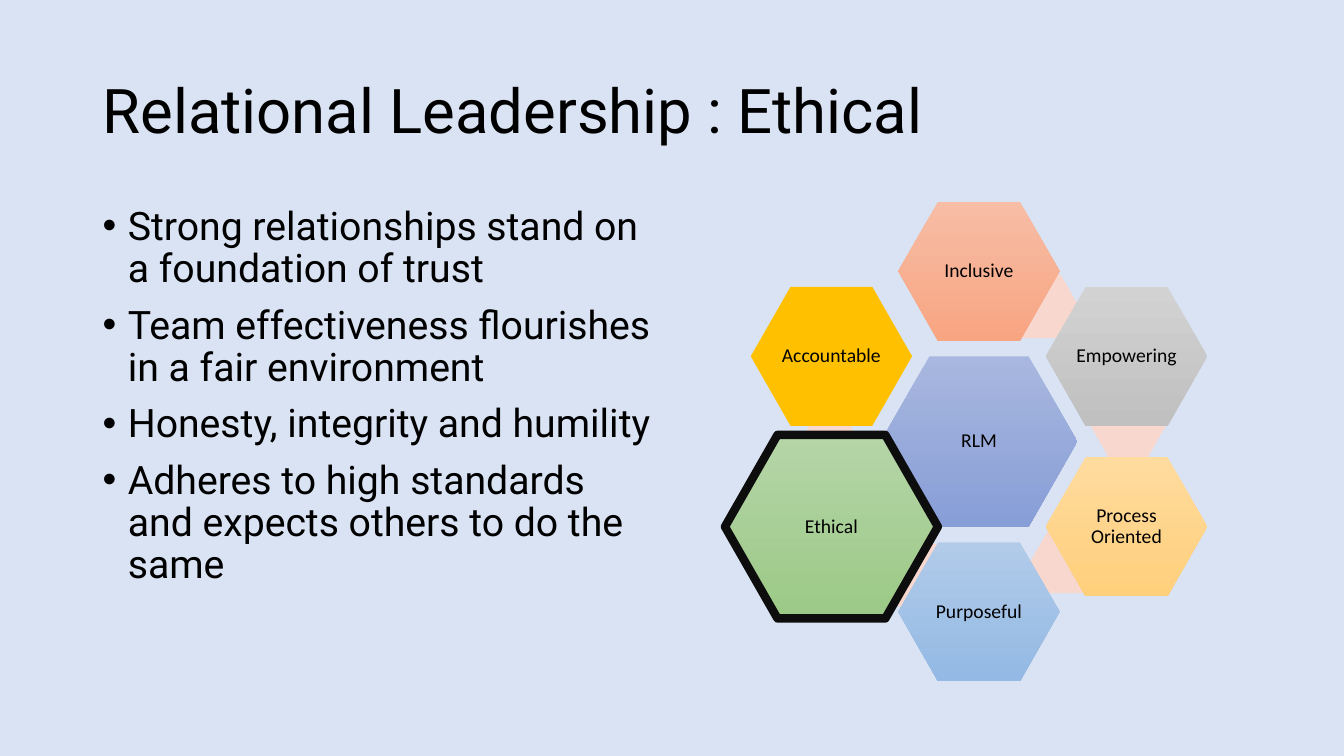
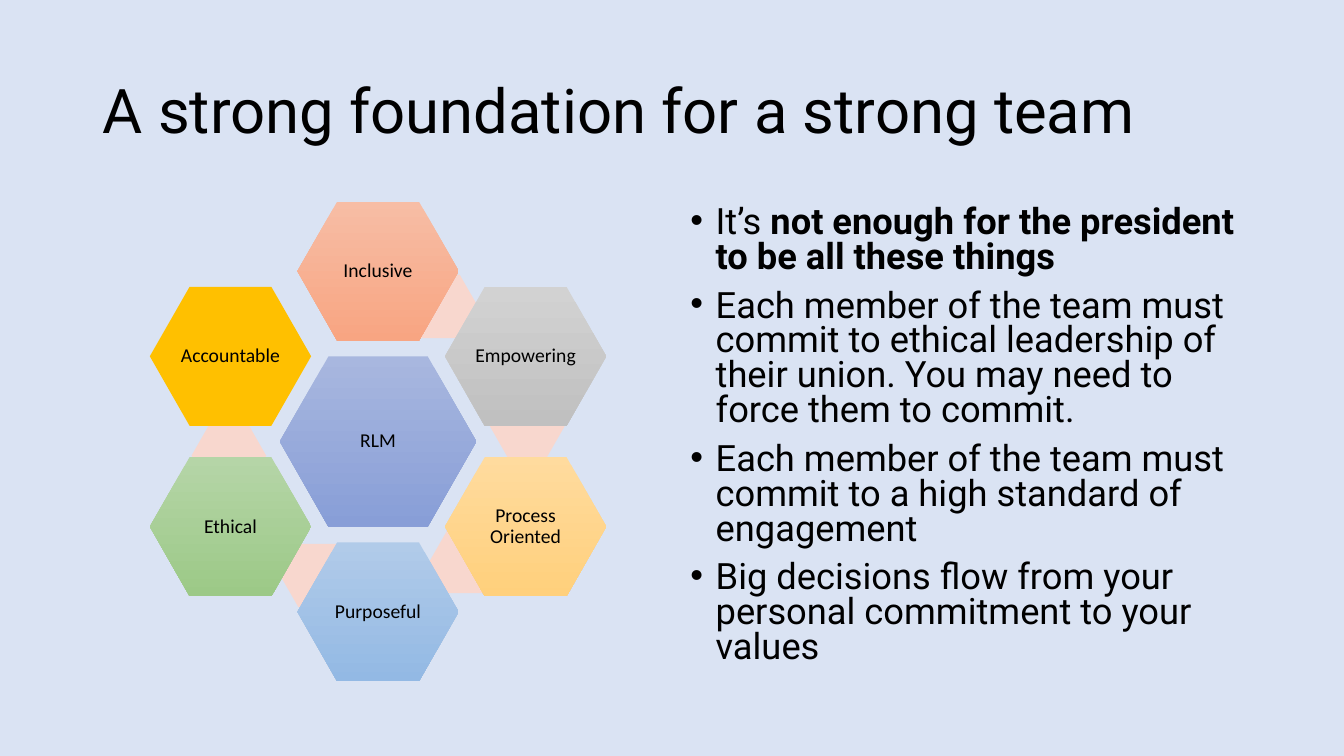
import math

from lxml import etree
from pptx import Presentation
from pptx.dml.color import RGBColor
from pptx.enum import shapes, text
from pptx.oxml import ns
from pptx.util import Inches, Pt

BACKGROUND = RGBColor(0xDA, 0xE3, 0xF3)
BLACK = RGBColor(0, 0, 0)
OUTLINE = RGBColor(0x0D, 0x0D, 0x0D)
LINK = RGBColor(0xF8, 0xD7, 0xCE)
BLUE = RGBColor(0xA8, 0xB7, 0xDF), RGBColor(0x88, 0x9E, 0xD7)
ORANGE = RGBColor(0xF7, 0xBD, 0xA5), RGBColor(0xF8, 0xA5, 0x82)
GREY = RGBColor(0xD2, 0xD2, 0xD2), RGBColor(0xC0, 0xC0, 0xC0)
YELLOW = RGBColor(0xFF, 0xDB, 0x9E), RGBColor(0xFF, 0xD0, 0x7C)
SKY = RGBColor(0xB1, 0xCB, 0xE9), RGBColor(0x93, 0xB9, 0xE4)
GREEN = RGBColor(0xB5, 0xD5, 0xA7), RGBColor(0x9C, 0xC9, 0x87)
GOLD = (RGBColor(0xFF, 0xC0, 0x00),)

BODY_FONT, LABEL_FONT = "Roboto", "Calibri"
CENTER_SIZE, RING_SIZE, LINK_SIZE = (1.95, 1.69), (1.6, 1.38), (0.74, 0.63)
RING_RADIUS = 1.69
EMPHASIS = 1.32

RING = [
    ("Inclusive", ORANGE, (0.62, -1.34)),
    ("Empowering", GREY, (1.48, -0.15)),
    ("Process Oriented", YELLOW, (0.88, 1.19)),
    ("Purposeful", SKY, (-0.6, 1.33)),
    ("Ethical", GREEN, (-1.48, 0.14)),
    ("Accountable", GOLD, None),
]

SLIDES = [
    {
        "title": "Relational Leadership : Ethical",
        "bullets": [
            [("Strong relationships stand on a foundation of trust", False)],
            [("Team effectiveness flourishes in a fair environment", False)],
            [("Honesty, integrity and humility", False)],
            [("Adheres to high standards and expects others to do the same", False)],
        ],
        "left": 0.92, "size": 28, "spacing": 0.9,
        "center": (9.71, 4.38), "emphasized": "Ethical",
    },
    {
        "title": "A strong foundation for a strong team",
        "bullets": [
            [("It’s ", False), ("not enough for the president to be all these things", True)],
            [("Each member of the team must commit to ethical leadership of their union. "
              "You may need to force them to commit.", False)],
            [("Each member of the team must commit to a high standard of engagement", False)],
            [("Big decisions flow from your personal commitment to your values", False)],
        ],
        "left": 6.75, "size": 25.9, "spacing": 0.8,
        "center": (3.75, 4.38), "emphasized": None,
    },
]


def style(font, name, size, bold=False):
    font.name, font.size, font.bold = name, Pt(size), bold
    font.color.rgb = BLACK


def add_text_box(page, left, top, width, height):
    frame = page.shapes.add_textbox(*map(Inches, (left, top, width, height))).text_frame
    frame.word_wrap = True
    return frame


def add_title(page, title):
    frame = add_text_box(page, 0.92, 0.4, 11.5, 1.45)
    frame.vertical_anchor = text.MSO_ANCHOR.MIDDLE
    frame.text = title
    paragraph = frame.paragraphs[0]
    paragraph.line_spacing = 0.9
    style(paragraph.runs[0].font, BODY_FONT, 44)


def add_bullets(page, bullets, left, size, spacing):
    frame = add_text_box(page, left, 2, 5.67, 4.76)
    for index, spans in enumerate(bullets):
        paragraph = frame.add_paragraph() if index else frame.paragraphs[0]
        paragraph.line_spacing = spacing
        paragraph.space_before = Pt(10 if index else 0)
        properties = paragraph._p.get_or_add_pPr()
        properties.set("marL", str(Inches(0.25)))
        properties.set("indent", str(Inches(-0.25)))
        etree.SubElement(properties, ns.qn("a:buFont")).set("typeface", "Arial")
        etree.SubElement(properties, ns.qn("a:buChar")).set("char", "•")
        for words, bold in spans:
            span = paragraph.add_run()
            span.text = words
            style(span.font, BODY_FONT, size, bold)


def add_hexagon(group, center, size, colors, label="", outlined=False):
    corner = [middle - length / 2 for middle, length in zip(center, size)]
    hexagon = group.shapes.add_shape(
        shapes.MSO_SHAPE.HEXAGON, *map(Inches, (*corner, *size)))
    hexagon.adjustments[0] = 0.286
    hexagon.shadow.inherit = False
    if len(colors) == 1:
        hexagon.fill.solid()
        hexagon.fill.fore_color.rgb = colors[0]
    else:
        hexagon.fill.gradient()
        hexagon.fill.gradient_angle = 270
        for stop, color in zip(hexagon.fill.gradient_stops, colors):
            stop.color.rgb = color
    if outlined:
        hexagon.line.color.rgb = OUTLINE
        hexagon.line.width = Pt(6)
    else:
        hexagon.line.fill.background()
    if label:
        frame = hexagon.text_frame
        frame.word_wrap = True
        frame.vertical_anchor = text.MSO_ANCHOR.MIDDLE
        frame.margin_left = frame.margin_right = Inches(0.02)
        frame.margin_top = frame.margin_bottom = Inches(0.02)
        frame.text = label
        paragraph = frame.paragraphs[0]
        paragraph.alignment = text.PP_ALIGN.CENTER
        paragraph.line_spacing = 0.9
        style(paragraph.runs[0].font, LABEL_FONT, 14)


def add_model(page, center, emphasized):
    group = page.shapes.add_group_shape()
    x, y = center
    add_hexagon(group, center, CENTER_SIZE, BLUE, "RLM")
    for index, (label, colors, link) in enumerate(RING):
        if link:
            add_hexagon(group, (x + link[0], y + link[1]), LINK_SIZE, (LINK,))
        angle = math.radians(60 * index)
        place = x + RING_RADIUS * math.sin(angle), y - RING_RADIUS * math.cos(angle)
        outlined = label == emphasized
        scale = EMPHASIS if outlined else 1
        size = [length * scale for length in RING_SIZE]
        add_hexagon(group, place, size, colors, label, outlined)


def main():
    deck = Presentation()
    deck.slide_width, deck.slide_height = Inches(13.33), Inches(7.5)
    background = deck.slide_master.background.fill
    background.solid()
    background.fore_color.rgb = BACKGROUND
    for content in SLIDES:
        page = deck.slides.add_slide(deck.slide_layouts[6])
        add_title(page, content["title"])
        add_bullets(page, content["bullets"], content["left"],
                    content["size"], content["spacing"])
        add_model(page, content["center"], content["emphasized"])
    deck.save("out.pptx")


if __name__ == "__main__":
    main()
